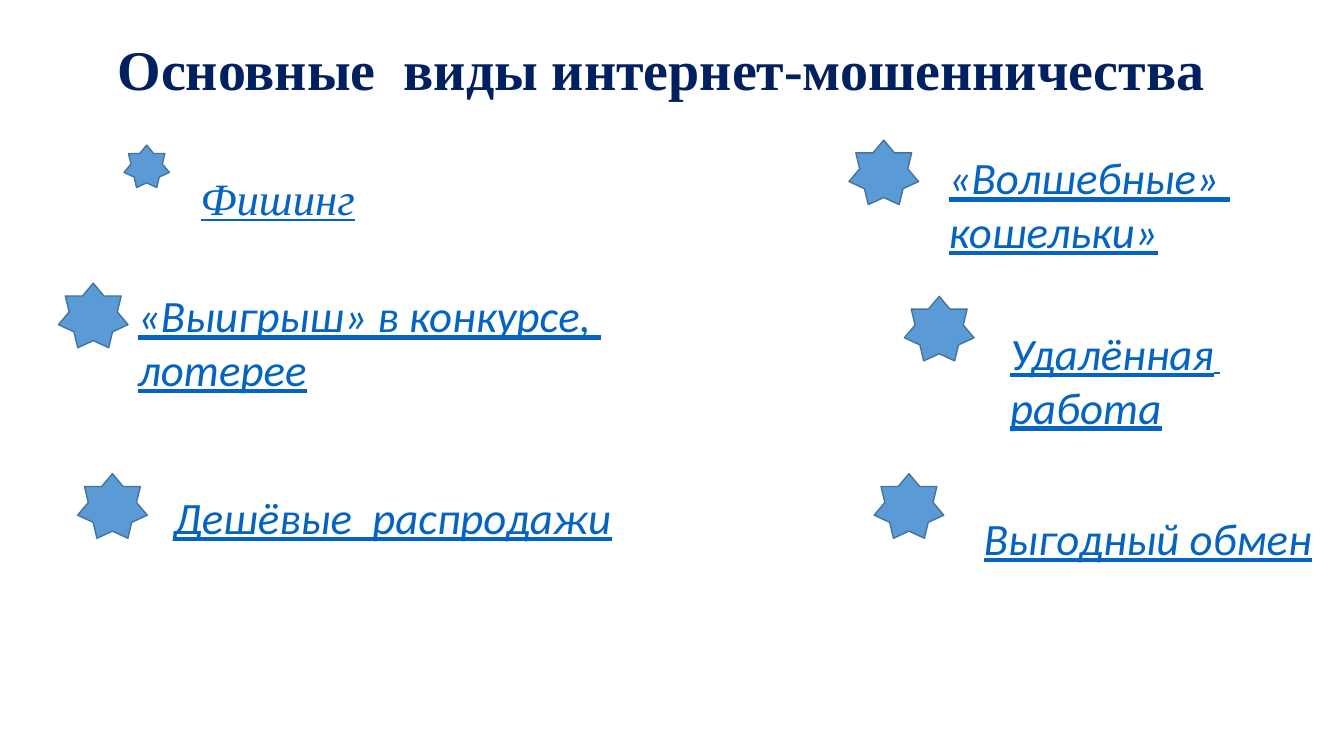
from dataclasses import dataclass

from pptx import Presentation
from pptx.dml.color import RGBColor
from pptx.enum.shapes import MSO_SHAPE
from pptx.enum.text import MSO_AUTO_SIZE, PP_ALIGN
from pptx.slide import Slide
from pptx.text.text import _Paragraph
from pptx.util import Inches, Pt


@dataclass(frozen=True)
class Theme:
    """Colours, fonts and type sizes."""
    navy: RGBColor = RGBColor(0x00, 0x20, 0x60)
    link: RGBColor = RGBColor(0x05, 0x63, 0xC1)
    fill: RGBColor = RGBColor(0x5B, 0x9B, 0xD5)
    edge: RGBColor = RGBColor(0x43, 0x73, 0x9E)
    serif: str = "Times New Roman"
    sans: str = "Calibri"
    head: int = 40
    body: int = 32
    small: int = 18


THEME = Theme()


@dataclass(frozen=True)
class Run:
    """A piece of text in one style."""
    text: str
    size: int = THEME.body
    font: str = THEME.sans
    color: RGBColor = THEME.link
    title: bool = False


@dataclass(frozen=True)
class Label:
    """A text box and its lines of runs."""
    left: float
    top: float
    width: float
    height: float
    lines: tuple[tuple[Run, ...], ...]
    wrap: bool = False
    align: PP_ALIGN = PP_ALIGN.LEFT


@dataclass(frozen=True)
class Star:
    """A seven-pointed marker."""
    left: float
    top: float
    width: float = 0.69
    height: float = 0.64


TITLE = Run("Основные  виды интернет-мошенничества", THEME.head,
            THEME.serif, THEME.navy, True)

LABELS = (
    Label(0.59, 0.29, 11.94, 2.39, ((TITLE,),), True, PP_ALIGN.CENTER),
    Label(9.31, 1.44, 3.01, 1.18,
          ((Run("«Волшебные» "),), (Run("кошельки»"),))),
    Label(1.62, 4.81, 4.59, 0.64, ((Run("Дешёвые  распродажи"),),)),
    Label(9.66, 5.02, 3.49, 0.64, ((Run("Выгодный обмен"),),)),
    Label(1.27, 2.81, 5.24, 1.18,
          ((Run("«Выигрыш» в конкурсе, "),), (Run("лотерее"),)), True),
    Label(9.92, 3.18, 2.29, 1.18,
          ((Run("Удалённая"), Run(" ", THEME.small)), (Run("работа"),))),
    Label(1.89, 1.64, 1.75, 0.64, ((Run("Фишинг", font=THEME.serif),),)),
)

STARS = (
    Star(8.42, 1.39),
    Star(1.23, 1.44, 0.45, 0.42),
    Star(8.97, 2.94),
    Star(0.58, 2.81),
    Star(8.67, 4.7),
    Star(0.77, 4.7),
)


def add_run(para: _Paragraph, item: Run) -> None:
    """Add one styled run to a paragraph."""
    run = para.add_run()
    run.text = item.text
    font = run.font
    font.name = item.font
    font.size = Pt(item.size)
    font.color.rgb = item.color
    font.bold = item.title
    font.italic = font.underline = not item.title


def add_label(slide: Slide, label: Label) -> None:
    """Draw a text box, one paragraph per line."""
    box = slide.shapes.add_textbox(Inches(label.left), Inches(label.top),
                                   Inches(label.width), Inches(label.height))
    frame = box.text_frame
    frame.word_wrap = label.wrap
    frame.auto_size = MSO_AUTO_SIZE.NONE
    for index, line in enumerate(label.lines):
        para = frame.add_paragraph() if index else frame.paragraphs[0]
        para.alignment = label.align
        for item in line:
            add_run(para, item)


def add_star(slide: Slide, star: Star) -> None:
    """Draw one star marker."""
    shape = slide.shapes.add_shape(
        MSO_SHAPE.STAR_7_POINT, Inches(star.left), Inches(star.top),
        Inches(star.width), Inches(star.height))
    shape.shadow.inherit = False
    shape.fill.solid()
    shape.fill.fore_color.rgb = THEME.fill
    shape.line.color.rgb = THEME.edge
    shape.line.width = Pt(1)


def main() -> None:
    """Build and save the slide."""
    deck = Presentation()
    deck.slide_width = Inches(13.33)
    deck.slide_height = Inches(7.5)
    slide = deck.slides.add_slide(deck.slide_layouts[6])
    for label in LABELS:
        add_label(slide, label)
    for star in STARS:
        add_star(slide, star)
    deck.save("out.pptx")


if __name__ == "__main__":
    main()
